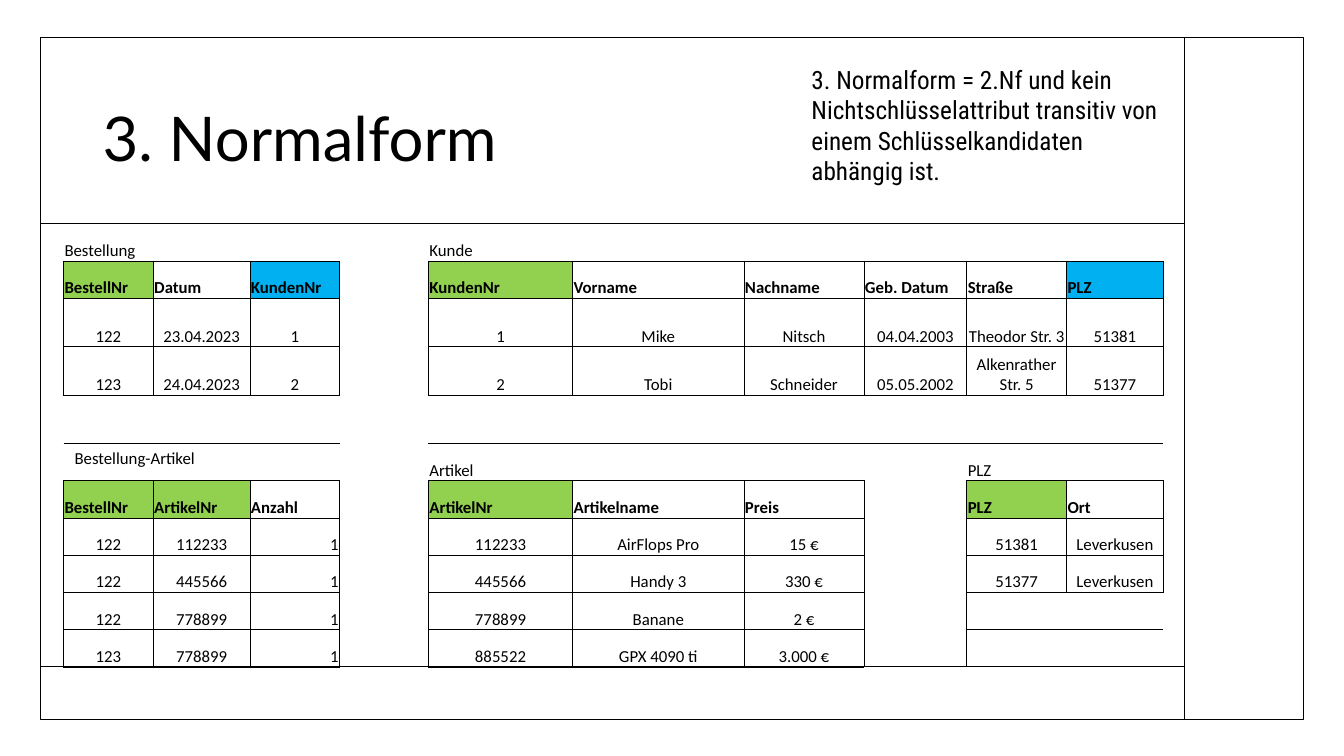
from dataclasses import dataclass

from pptx import Presentation, util as u
from pptx.dml.color import RGBColor
from pptx.enum import shapes, text
from pptx.oxml.ns import qn
from lxml import etree

BLACK = RGBColor(0x00, 0x00, 0x00)
PRIMARY_KEY = RGBColor(0x92, 0xD0, 0x50)
FOREIGN_KEY = RGBColor(0x00, 0xB0, 0xF0)

COLUMN_WIDTHS = [0.89, 0.96, 0.89, 0.88, 1.43, 1.7, 1.19, 1.02, 0.99, 0.96]
ROW_HEIGHTS = [0.37] * 2 + [0.48] * 3 + [0.37] * 6
NO_GRID_STYLE = "{2D5ABB26-0587-4C30-8999-92F81FD0307C}"
# Border tag and the row and column step to the neighbour on that side
SIDES = [("a:lnL", 0, -1), ("a:lnR", 0, 1), ("a:lnT", -1, 0), ("a:lnB", 1, 0)]

LEFT, CENTER, RIGHT = text.PP_ALIGN.LEFT, text.PP_ALIGN.CENTER, text.PP_ALIGN.RIGHT


@dataclass(frozen=True)
class Relation:
    name: str
    row: int
    col: int
    attributes: list[str]
    primary: list[str]
    records: list[list[str]]
    foreign: str = ""


@dataclass(frozen=True)
class Caption:
    words: str
    box: tuple[float, float, float, float]
    font: str
    size: int
    anchor: text.MSO_ANCHOR
    spacing: float = 1.0


RELATIONS = [
    Relation("Bestellung", 0, 0, ["BestellNr", "Datum", "KundenNr"], ["BestellNr"],
             [["122", "23.04.2023", "1"], ["123", "24.04.2023", "2"]], "KundenNr"),
    Relation("Kunde", 0, 4,
             ["KundenNr", "Vorname", "Nachname", "Geb. Datum", "Straße", "PLZ"],
             ["KundenNr"],
             [["1", "Mike", "Nitsch", "04.04.2003", "Theodor Str. 3", "51381"],
              ["2", "Tobi", "Schneider", "05.05.2002", "Alkenrather Str. 5", "51377"]],
             "PLZ"),
    Relation("Bestellung-Artikel", 5, 0, ["BestellNr", "ArtikelNr", "Anzahl"],
             ["BestellNr", "ArtikelNr"],
             [["122", "112233", "1"], ["122", "445566", "1"],
              ["122", "778899", "1"], ["123", "778899", "1"]]),
    Relation("Artikel", 5, 4, ["ArtikelNr", "Artikelname", "Preis"], ["ArtikelNr"],
             [["112233", "AirFlops Pro", "15 €"], ["445566", "Handy 3", "330 €"],
              ["778899", "Banane", "2 €"], ["885522", "GPX 4090 ti", "3.000 €"]]),
    Relation("PLZ", 5, 8, ["PLZ", "Ort"], ["PLZ"],
             [["51381", "Leverkusen"], ["51377", "Leverkusen"]]),
]

CAPTIONS = [
    Caption("3. Normalform", (0.92, 0.89, 10.38, 1.02), "Lato", 44,
            text.MSO_ANCHOR.MIDDLE, 0.9),
    Caption("3. Normalform = 2.Nf und kein Nichtschlüsselattribut transitiv von "
            "einem Schlüsselkandidaten abhängig ist.",
            (7.95, 0.59, 3.81, 1.62), "Roboto Condensed", 18, text.MSO_ANCHOR.TOP),
]

# Start and end of the dividing lines
DIVIDERS = [(0.4, 2.22, 11.75, 2.22), (0.41, 6.61, 11.75, 6.61), (11.75, 0.37, 11.75, 7.13)]


def style_run(run, font: str, size: int, bold: bool = False) -> None:
    run.font.name = font
    run.font.size = u.Pt(size)
    run.font.bold = bold
    run.font.color.rgb = BLACK


def add_frame(slide) -> None:
    frame = slide.shapes.add_shape(
        shapes.MSO_SHAPE.RECTANGLE, *map(u.Inches, (0.4, 0.37, 12.53, 6.77)))
    frame.shadow.inherit = False
    frame.fill.background()
    frame.line.color.rgb = BLACK
    frame.line.width = u.Pt(1)


def add_divider(slide, ends: tuple[float, float, float, float]) -> None:
    divider = slide.shapes.add_connector(
        shapes.MSO_CONNECTOR.STRAIGHT, *map(u.Inches, ends))
    divider.line.color.rgb = BLACK
    divider.line.width = u.Pt(1)
    etree.SubElement(divider._element.spPr, qn("a:effectLst"))


def add_caption(slide, caption: Caption) -> None:
    frame = slide.shapes.add_textbox(*map(u.Inches, caption.box)).text_frame
    frame.word_wrap = True
    frame.vertical_anchor = caption.anchor
    frame.text = caption.words
    frame.paragraphs[0].line_spacing = caption.spacing
    style_run(frame.paragraphs[0].runs[0], caption.font, caption.size)


def add_border(cell, side: str) -> None:
    border = etree.SubElement(cell._tc.get_or_add_tcPr(), qn(side), w=str(u.Pt(0.5)))
    fill = etree.SubElement(border, qn("a:solidFill"))
    etree.SubElement(fill, qn("a:srgbClr"), val=str(BLACK))


def write_cell(cell, words: str, align: text.PP_ALIGN = LEFT, bold: bool = False) -> None:
    paragraph = cell.text_frame.paragraphs[0]
    paragraph.text = words
    paragraph.alignment = align
    style_run(paragraph.runs[0], "Calibri", 12, bold)


def add_grid(slide):
    table = slide.shapes.add_table(
        len(ROW_HEIGHTS), len(COLUMN_WIDTHS), u.Inches(0.63), u.Inches(2.22),
        u.Inches(sum(COLUMN_WIDTHS)), u.Inches(sum(ROW_HEIGHTS))).table
    table.first_row = table.horz_banding = False
    table._tbl.tblPr.find(qn("a:tableStyleId")).text = NO_GRID_STYLE
    for column, width in zip(table.columns, COLUMN_WIDTHS):
        column.width = u.Inches(width)
    for row, height in zip(table.rows, ROW_HEIGHTS):
        row.height = u.Inches(height)

    # A side is ruled if the cell or its neighbour belongs to a relation
    boxed = {(r, c) for rel in RELATIONS
             for r in range(rel.row + 1, rel.row + 2 + len(rel.records))
             for c in range(rel.col, rel.col + len(rel.attributes))}
    for r in range(len(ROW_HEIGHTS)):
        for c in range(len(COLUMN_WIDTHS)):
            cell = table.cell(r, c)
            for side, down, across in SIDES:
                if boxed & {(r, c), (r + down, c + across)}:
                    add_border(cell, side)
            cell.fill.background()
            cell.vertical_anchor = text.MSO_ANCHOR.BOTTOM
            cell.margin_left = cell.margin_right = cell.margin_top = u.Inches(0.01)
            cell.margin_bottom = 0
    return table


def fill_relation(table, rel: Relation) -> None:
    write_cell(table.cell(rel.row, rel.col), rel.name)
    for c, attribute in enumerate(rel.attributes, rel.col):
        header = table.cell(rel.row + 1, c)
        write_cell(header, attribute, bold=True)
        if attribute in rel.primary or attribute == rel.foreign:
            header.fill.solid()
            header.fill.fore_color.rgb = (
                PRIMARY_KEY if attribute in rel.primary else FOREIGN_KEY)
    for r, record in enumerate(rel.records, rel.row + 2):
        for c, (attribute, value) in enumerate(zip(rel.attributes, record), rel.col):
            write_cell(table.cell(r, c), value, RIGHT if attribute == "Anzahl" else CENTER)


def main() -> None:
    deck = Presentation()
    deck.slide_width, deck.slide_height = u.Inches(13.33), u.Inches(7.5)
    slide = deck.slides.add_slide(deck.slide_layouts[6])

    # Frame, title and dividers
    title, definition = CAPTIONS
    add_frame(slide)
    add_caption(slide, title)
    for ends in DIVIDERS:
        add_divider(slide, ends)

    # Relations
    table = add_grid(slide)
    for relation in RELATIONS:
        fill_relation(table, relation)

    # The long relation name spans two columns and sits at the top
    order_items = table.cell(5, 0)
    order_items.merge(table.cell(5, 1))
    order_items.vertical_anchor = text.MSO_ANCHOR.TOP
    order_items.margin_left = order_items.margin_right = u.Inches(0.11)
    order_items.margin_top = order_items.margin_bottom = u.Inches(0.05)

    # Definition
    add_caption(slide, definition)
    deck.save("out.pptx")


if __name__ == "__main__":
    main()
